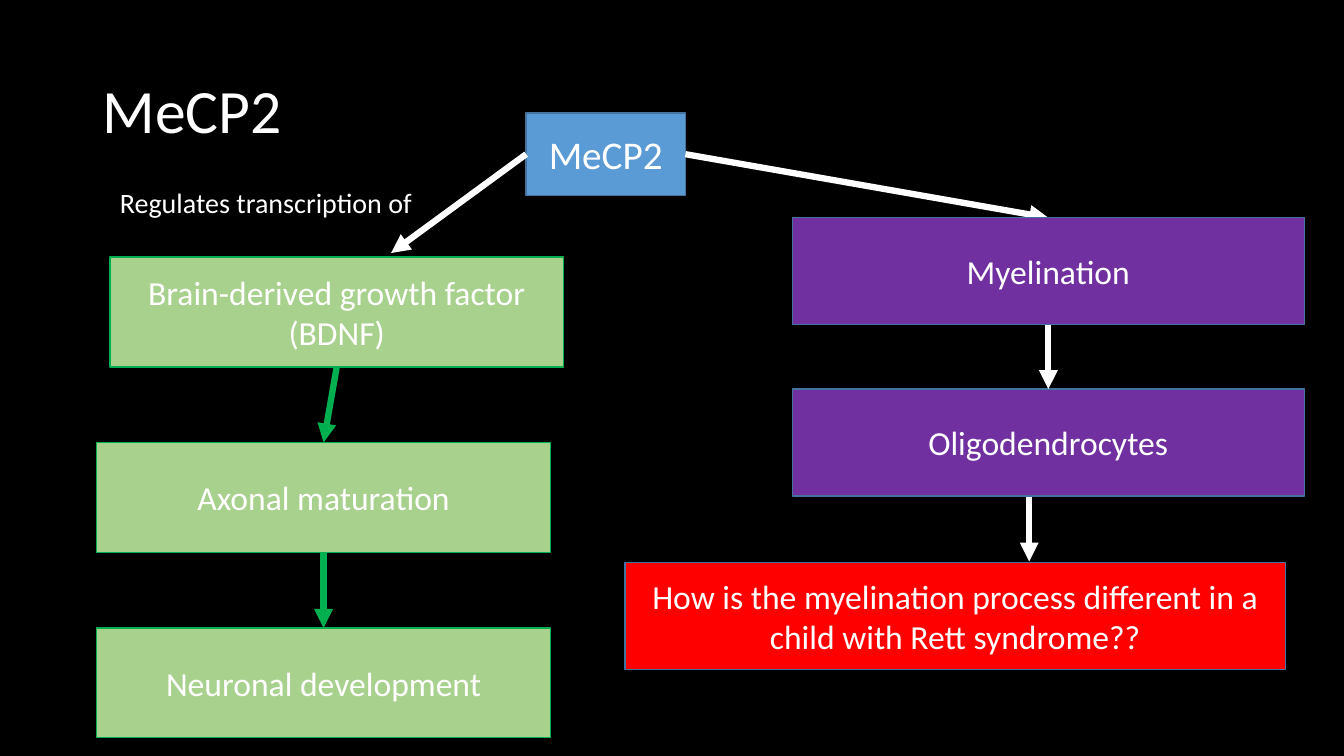
from pptx import Presentation
from pptx.dml.color import RGBColor
from pptx.enum.shapes import MSO_CONNECTOR, MSO_SHAPE
from pptx.enum.text import MSO_ANCHOR, PP_ALIGN
from pptx.oxml.ns import qn
from pptx.util import Inches, Pt
from lxml import etree

RECT = MSO_SHAPE.RECTANGLE
STRAIGHT = MSO_CONNECTOR.STRAIGHT
MIDDLE = MSO_ANCHOR.MIDDLE
TOP_ANCHOR = MSO_ANCHOR.TOP
CENTER = PP_ALIGN.CENTER
LEFT_ALIGN = PP_ALIGN.LEFT

BLACK = RGBColor(0x00, 0x00, 0x00)
WHITE = RGBColor(0xFF, 0xFF, 0xFF)
BLUE = RGBColor(0x5B, 0x9B, 0xD5)
STEEL = RGBColor(0x43, 0x73, 0x9E)
LIGHT_GREEN = RGBColor(0xA9, 0xD1, 0x8E)
GREEN = RGBColor(0x00, 0xB0, 0x50)
PURPLE = RGBColor(0x70, 0x30, 0xA0)
RED = RGBColor(0xFF, 0x00, 0x00)

# The slide is a grid of 100 columns by 100 rows
WIDTH, HEIGHT = Inches(13.33), Inches(7.5)
COL, ROW = WIDTH / 100, HEIGHT / 100

# Connection sites of a rectangle
TOP, LEFT, BOTTOM, RIGHT = range(4)

GREEN_W, GREEN_H = 33.75, 14.53
GREEN_Y, GREEN_STEP = 34, 24.53
PURPLE_X, PURPLE_W = 58.95, 38.1
PURPLE_Y, PURPLE_STEP = 28.8, 22.67
RIGHT_H = 14.13


def grid(*cells):
    """Turn alternating columns and rows into slide lengths."""
    return [round(n * (ROW if i % 2 else COL)) for i, n in enumerate(cells)]


def set_text(sp, text, size, align, anchor):
    tf = sp.text_frame
    tf.text = text
    tf.vertical_anchor = anchor
    p = tf.paragraphs[0]
    p.alignment = align
    font = p.runs[0].font
    font.name = "Calibri"
    font.size = Pt(size)
    font.color.rgb = WHITE


def add_label(s, text, cells, size, anchor=TOP_ANCHOR, wrap=True):
    sp = s.shapes.add_textbox(*grid(*cells))
    sp.text_frame.word_wrap = wrap
    set_text(sp, text, size, LEFT_ALIGN, anchor)
    sp.text_frame.paragraphs[0].line_spacing = 0.9 if wrap else 1.0


def add_box(s, text, cells, fill, line=STEEL, size=24):
    sp = s.shapes.add_shape(RECT, *grid(*cells))
    sp.shadow.inherit = False
    sp.fill.solid()
    sp.fill.fore_color.rgb = fill
    sp.line.color.rgb = line
    sp.line.width = Pt(1)
    sp.text_frame.word_wrap = True
    set_text(sp, text, size, CENTER, MIDDLE)
    return sp


def add_arrow(s, color, start=(0, 0), end=(0, 0)):
    c = s.shapes.add_connector(STRAIGHT, *grid(*start, *end))
    c.line.color.rgb = color
    c.line.width = Pt(4.5)
    ln = c.line._get_or_add_ln()
    etree.SubElement(ln, qn("a:tailEnd"), type="triangle")
    etree.SubElement(c.element.spPr, qn("a:effectLst"))
    return c


def link(s, source, target, color, site=BOTTOM):
    """Glue an arrow from a site of source to the top of target."""
    c = add_arrow(s, color)
    c.begin_connect(source, site)
    c.end_connect(target, TOP)
    return c


def main():
    prs = Presentation()
    prs.slide_width, prs.slide_height = WIDTH, HEIGHT
    s = prs.slides.add_slide(prs.slide_layouts[6])
    s.background.fill.solid()
    s.background.fill.fore_color.rgb = BLACK

    add_label(s, "MeCP2", (6.9, 5.33, 86.25, 19.33), 44, MIDDLE)
    add_label(s, "Regulates transcription of", (8.18, 23.87, 23.48, 5.87), 20, wrap=False)
    hub = add_box(s, "MeCP2", (39.15, 14.93, 11.85, 10.93), BLUE, size=28)

    green_steps = (
        ("Brain-derived growth factor (BDNF)", 8.18),
        ("Axonal maturation", 7.2),
        ("Neuronal development", 7.2),
    )
    greens = [
        add_box(s, text, (x, GREEN_Y + i * GREEN_STEP, GREEN_W, GREEN_H), LIGHT_GREEN, GREEN)
        for i, (text, x) in enumerate(green_steps)
    ]
    purples = [
        add_box(s, text, (PURPLE_X, PURPLE_Y + i * PURPLE_STEP, PURPLE_W, RIGHT_H), PURPLE)
        for i, text in enumerate(("Myelination", "Oligodendrocytes"))
    ]
    add_box(s, "How is the myelination process different in a child with Rett syndrome??",
            (46.5, 74.4, 49.13, RIGHT_H), RED)

    to_bdnf = add_arrow(s, WHITE, (39.15, 20.4), (29.1, 33.47))
    to_bdnf.begin_connect(hub, LEFT)
    to_myelination = link(s, hub, purples[0], WHITE, RIGHT)
    purples[0].element.addprevious(to_myelination.element)  # arrowhead goes behind the box

    for source, target in zip(greens, greens[1:]):
        link(s, source, target, GREEN)
    link(s, *purples, WHITE)
    add_arrow(s, WHITE, (76.58, 65.73), (76.58, 74.27))

    prs.save("out.pptx")


if __name__ == "__main__":
    main()
